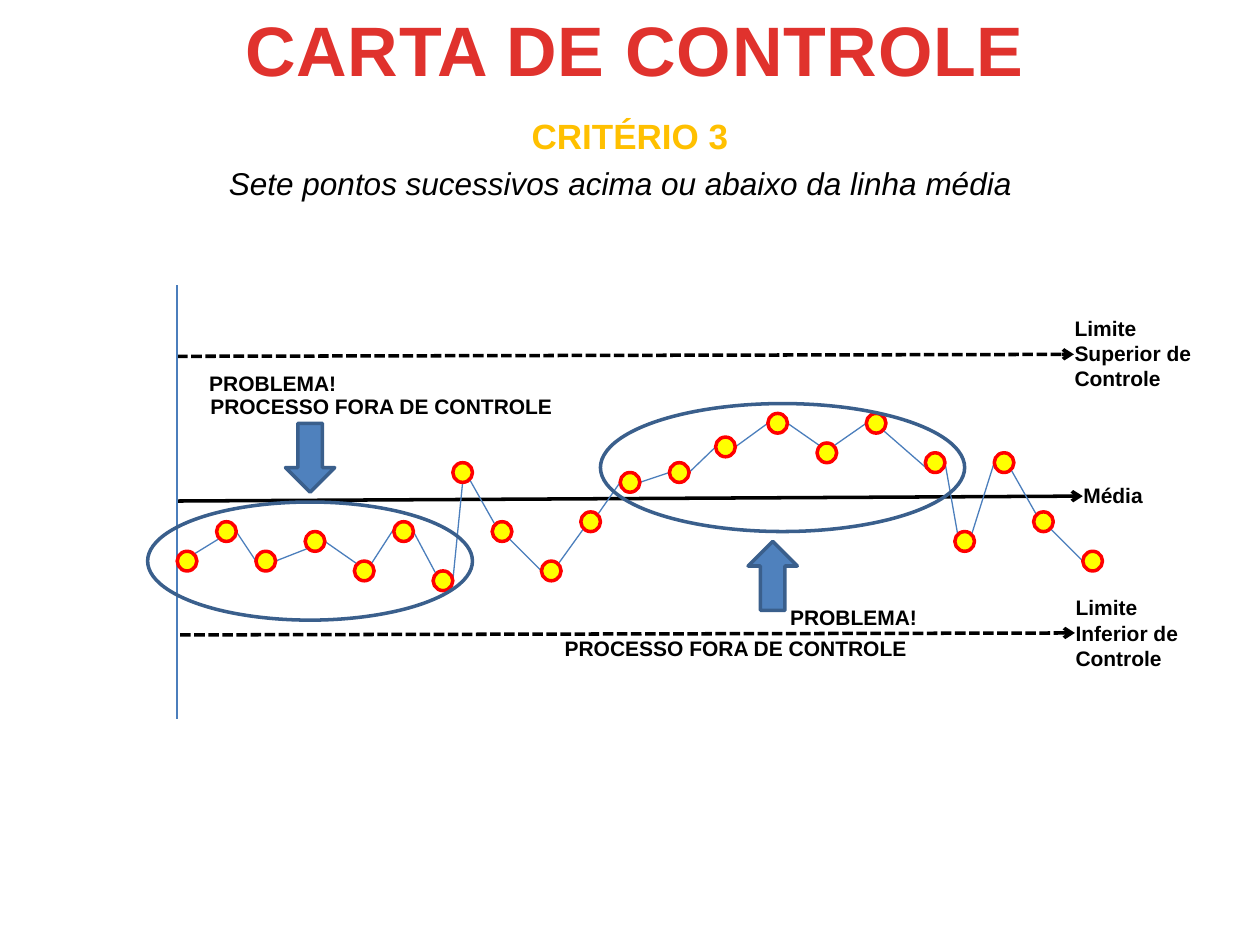
"""Builds the control chart slide for criterion 3."""
from dataclasses import dataclass
from itertools import pairwise
from math import sqrt

from lxml import etree
from pptx import Presentation
from pptx import util as u
from pptx.dml.color import RGBColor
from pptx.enum import dml, shapes, text
from pptx.oxml import ns


@dataclass(frozen=True)
class Theme:
    font: str = "Arial"
    black: str = "000000"
    white: str = "FFFFFF"
    title_top: str = "E0322D"
    title_bottom: str = "A2201C"
    criterion: str = "FFC000"
    marker: str = "FFFF00"
    marker_edge: str = "FF0000"
    trace: str = "4B7EBC"
    arrow: str = "4F81BD"
    edge: str = "3A5F8C"
    title_size: float = 40
    criterion_size: float = 20
    subtitle_size: float = 18
    label_size: float = 12
    thin: float = 0.75
    thick: float = 2


THEME = Theme()
COLUMNS, ROWS = 128, 96
DIAGONAL = 1 / sqrt(2)
SITES = {
    "E": (1, 0), "W": (-1, 0), "S": (0, 1),
    "NE": (DIAGONAL, -DIAGONAL), "NW": (-DIAGONAL, -DIAGONAL),
    "SE": (DIAGONAL, DIAGONAL), "SW": (-DIAGONAL, DIAGONAL),
}
MARKERS = [
    (19, 57, "W", "NE"), (23, 54, "SW", "E"), (27, 57, "W", "E"),
    (32, 55, "SW", "E"), (37, 58, "NW", "NE"), (41, 54, "NW", "E"),
    (45, 59, "NW", "E"), (47, 48, "S", "SE"), (51, 54, "NW", "SE"),
    (56, 58, "W", "NE"), (60, 53, "SW", "NE"), (64, 49, "W", "E"),
    (69, 48, "W", "E"), (73.7, 45.4, "W", "E"), (79, 43, "W", "E"),
    (84, 46, "NW", "NE"), (89, 43, "W", "SE"), (95, 47, "SW", "E"),
    (98, 55, "NW", "NE"), (102, 47, "W", "SE"), (106, 53, "NW", "SE"),
    (111, 57, "W", "E"),
]
LIMITS = [
    ((18, 50.9), (110, 50.4), None),
    ((18, 36.2), (109.1, 36), dml.MSO_LINE.SQUARE_DOT),
    ((18.3, 64.5), (109.2, 64.3), dml.MSO_LINE.SQUARE_DOT),
]
LABELS = [
    ((108.8, 48.4, 8.7, 3.8), "Média"),
    ((107.9, 31.4, 14.6, 9.1), "Limite\nSuperior de\nControle"),
    ((108, 59.8, 13.2, 9.1), "Limite\nInferior de\nControle"),
    ((20.1, 39.4, 37.8, 3.8), "PROCESSO FORA DE CONTROLE"),
    ((20, 37, 15.6, 3.8), "PROBLEMA!"),
    ((79, 60.8, 15.6, 3.8), "PROBLEMA!"),
    ((56.1, 63.9, 37.8, 3.8), "PROCESSO FORA DE CONTROLE"),
]


def write(frame, content, size, color=THEME.black, bold=False, italic=False,
          align=text.PP_ALIGN.LEFT, anchor=text.MSO_ANCHOR.TOP, wrap=True):
    """Fill a text frame, one paragraph per line, in a single format."""
    frame.word_wrap = wrap
    frame.vertical_anchor = anchor
    for index, line in enumerate(content.split("\n")):
        paragraph = frame.add_paragraph() if index else frame.paragraphs[0]
        paragraph.alignment = align
        run = paragraph.add_run()
        run.text = line
        font = run.font
        font.name, font.size = THEME.font, u.Pt(size)
        font.bold, font.italic = bold, italic
        font.color.rgb = RGBColor.from_string(color)


class ControlChart:
    """Holds the theme and the current slide, and draws on its grid."""

    def __init__(self, presentation, theme):
        """Add a title-only slide and work out the grid cell."""
        self.theme = theme
        self.slide = presentation.slides.add_slide(presentation.slide_layouts[5])
        self.cell = (presentation.slide_width / COLUMNS,
                     presentation.slide_height / ROWS)

    def lengths(self, *cells):
        """Turn alternating columns and rows into slide lengths."""
        return [round(value * self.cell[index % 2])
                for index, value in enumerate(cells)]

    def title(self, box, content):
        """Place the title and give it a gradient and letter spacing."""
        shape = self.slide.shapes.title
        shape.left, shape.top, shape.width, shape.height = self.lengths(*box)
        write(shape.text_frame, content, self.theme.title_size, bold=True,
              align=text.PP_ALIGN.CENTER)
        run = shape.text_frame.paragraphs[0].runs[0]
        fill = run.font.fill
        fill.gradient()
        fill.gradient_angle = 270
        colors = (self.theme.title_top, self.theme.title_bottom)
        for stop, place, color in zip(fill.gradient_stops, (0.25, 1), colors):
            stop.position = place
            stop.color.rgb = RGBColor.from_string(color)
        run._r.get_or_add_rPr().set("spc", "50")

    def label(self, box, content, size, **style):
        """Add an unwrapped text box."""
        shape = self.slide.shapes.add_textbox(*self.lengths(*box))
        write(shape.text_frame, content, size, wrap=False, **style)

    def shape(self, kind, box, fill=None, line=None, rotation=0):
        """Add a preset shape, with or without fill and outline."""
        shape = self.slide.shapes.add_shape(kind, *self.lengths(*box))
        shape.shadow.inherit = False
        shape.rotation = rotation
        for part, color in ((shape.fill, fill), (shape.line.fill, line)):
            if color:
                part.solid()
                part.fore_color.rgb = RGBColor.from_string(color)
            else:
                part.background()
        if line:
            shape.line.width = u.Pt(self.theme.thick)
        return shape

    def line(self, start, end, color, width, dash=None, arrow=False):
        """Add a straight line, dashed or with an arrowhead if asked."""
        connector = self.slide.shapes.add_connector(
            shapes.MSO_CONNECTOR.STRAIGHT, *self.lengths(*start, *end))
        connector.line.color.rgb = RGBColor.from_string(color)
        connector.line.width = u.Pt(width)
        if dash:
            connector.line.dash_style = dash
        if arrow:
            outline = connector.line._get_or_add_ln()
            etree.SubElement(outline, ns.qn("a:tailEnd"), type="arrow")
        etree.SubElement(connector._element.spPr, ns.qn("a:effectLst"))

    def trace(self, markers):
        """Join neighbouring markers at their sites and draw them."""
        for first, second in pairwise(markers):
            leaving, entering = SITES[first[3]], SITES[second[2]]
            self.line((first[0] + leaving[0], first[1] + leaving[1]),
                      (second[0] + entering[0], second[1] + entering[1]),
                      self.theme.trace, self.theme.thin)
        for column, row, *_ in markers:
            self.shape(shapes.MSO_SHAPE.OVAL, (column - 1, row - 1, 2, 2),
                       self.theme.marker, self.theme.marker_edge)


def main():
    """Build and save the slide."""
    presentation = Presentation()
    presentation.slide_width, presentation.slide_height = u.Inches(10), u.Inches(7.5)
    chart = ControlChart(presentation, THEME)
    chart.title((21, 0, 87, 9.9), "CARTA DE CONTROLE")
    for start, end, dash in LIMITS:
        chart.line(start, end, THEME.black, THEME.thick, dash, arrow=True)
    for box, content in LABELS:
        chart.label(box, content, THEME.label_size, bold=True)
    chart.line((18, 29), (18, 73), THEME.trace, THEME.thin)
    chart.trace(MARKERS)
    for box, rotation in (((28, 44, 7, 5), 90), ((75, 56, 7, 5), 270)):
        chart.shape(shapes.MSO_SHAPE.RIGHT_ARROW, box, THEME.arrow, THEME.edge, rotation)
    for box in ((15, 51, 33, 12), (61, 41, 37, 13)):
        chart.shape(shapes.MSO_SHAPE.OVAL, box, line=THEME.edge)
    banner = chart.shape(shapes.MSO_SHAPE.RECTANGLE, (48, 11, 32, 5.6), THEME.white)
    write(banner.text_frame, "CRITÉRIO 3", THEME.criterion_size, THEME.criterion,
          bold=True, align=text.PP_ALIGN.CENTER, anchor=text.MSO_ANCHOR.MIDDLE)
    chart.label((22, 16, 82.8, 5.1),
                "Sete pontos sucessivos acima ou abaixo da linha média",
                THEME.subtitle_size, italic=True)
    presentation.save("out.pptx")


if __name__ == "__main__":
    main()
